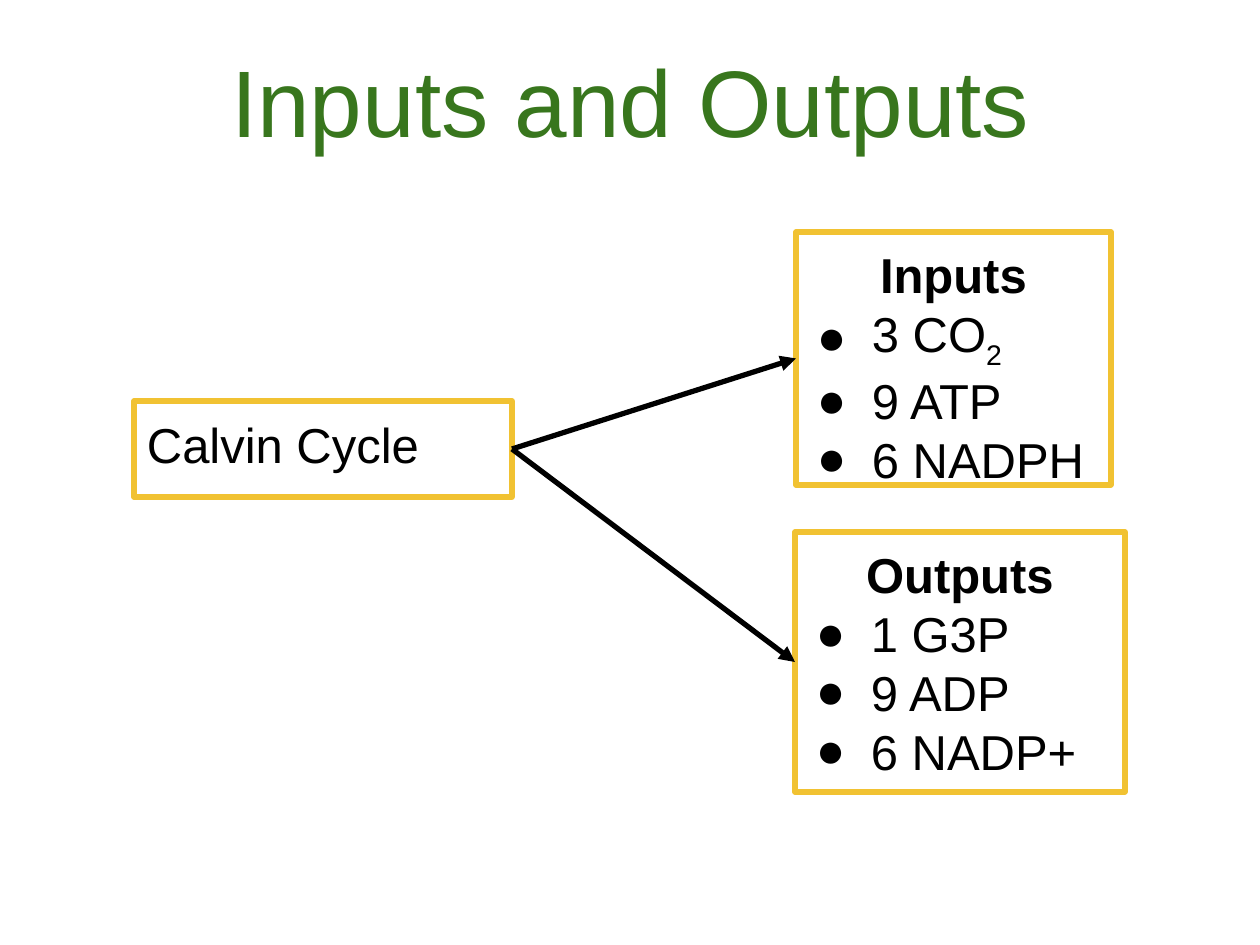
from dataclasses import dataclass

from lxml.etree import SubElement
from pptx import Presentation
from pptx.dml.color import RGBColor
from pptx.enum.shapes import MSO_CONNECTOR as Connector, MSO_SHAPE as Preset
from pptx.enum.text import MSO_ANCHOR as Anchor, MSO_AUTO_SIZE as AutoSize, PP_ALIGN as Align
from pptx.oxml.ns import qn
from pptx.util import Emu, Pt

PX_PER_INCH = 126
COLORS = {"title": "38761D", "border": "F1C232", "ink": "000000"}
FONT = "Arial"
INSET = 13
BULLET_INDENT, BULLET_HANG = 63, 55
RIGHT_SIDE, LEFT_SIDE = 3, 1


@dataclass
class Box:
    left: int
    top: int
    width: int
    height: int
    label: str
    items: tuple[str, ...] = ()


def px(length: int) -> Emu:
    return Emu(round(length * 914400 / PX_PER_INCH))


def color(name: str) -> RGBColor:
    return RGBColor.from_string(COLORS[name])


def set_frame(frame) -> None:
    frame.word_wrap = True
    frame.auto_size = AutoSize.NONE
    frame.vertical_anchor = Anchor.TOP
    frame.margin_left = frame.margin_right = px(INSET)
    frame.margin_top = frame.margin_bottom = px(INSET)


def write(paragraph, text: str, size: int, ink: str, align, bold: bool = False) -> None:
    """Fill a paragraph; an underscore makes the next piece a subscript."""
    paragraph.alignment = align
    font = paragraph.font
    font.name, font.size, font.bold = FONT, Pt(size), bold
    font.color.rgb = color(ink)
    base, _, subscript = text.partition("_")
    paragraph.add_run().text = base
    if subscript:
        lowered = paragraph.add_run()
        lowered.text = subscript
        lowered.font._element.set("baseline", "-25000")


def add_bullet(paragraph) -> None:
    props = paragraph._p.get_or_add_pPr()
    props.set("marL", str(px(BULLET_INDENT)))
    props.set("indent", str(-px(BULLET_HANG)))
    bullet_color = SubElement(props, qn("a:buClr"))
    SubElement(bullet_color, qn("a:srgbClr"), val=COLORS["ink"])
    SubElement(props, qn("a:buFont"), typeface=FONT)
    SubElement(props, qn("a:buChar"), char="●")
    # The schema wants the paragraph's font after its bullet
    props.append(props.find(qn("a:defRPr")))


def draw_box(slide, box: Box):
    shape = slide.shapes.add_shape(
        Preset.RECTANGLE, px(box.left), px(box.top), px(box.width), px(box.height))
    shape.shadow.inherit = False
    shape.fill.background()
    shape.line.color.rgb = color("border")
    shape.line.width = Pt(3)
    frame = shape.text_frame
    set_frame(frame)
    is_list = bool(box.items)
    write(frame.paragraphs[0], box.label, 28, "ink",
          Align.CENTER if is_list else Align.LEFT, bold=is_list)
    for item in box.items:
        entry = frame.add_paragraph()
        write(entry, item, 28, "ink", Align.LEFT)
        add_bullet(entry)
    return shape


def draw_arrow(slide, source, target) -> None:
    arrow = slide.shapes.add_connector(Connector.STRAIGHT, 0, 0, 0, 0)
    arrow.begin_connect(source, RIGHT_SIDE)
    arrow.end_connect(target, LEFT_SIDE)
    arrow.line.color.rgb = color("ink")
    arrow.line.width = Pt(3)
    SubElement(arrow.line._get_or_add_ln(), qn("a:tailEnd"), type="triangle")
    SubElement(arrow._element.spPr, qn("a:effectLst"))


def main() -> None:
    deck = Presentation()
    deck.slide_width, deck.slide_height = px(1260), px(945)
    slide = deck.slides.add_slide(deck.slide_layouts[5])

    # Title
    title = slide.shapes.title
    title.left, title.top, title.width, title.height = px(32), px(30), px(1197), px(105)
    set_frame(title.text_frame)
    write(title.text_frame.paragraphs[0], "Inputs and Outputs", 54, "title", Align.CENTER)

    # Cycle and what goes in and out of it
    inputs = draw_box(slide, Box(796, 232, 315, 253, "Inputs", ("3 CO_2", "9 ATP", "6 NADPH")))
    outputs = draw_box(slide, Box(795, 532, 330, 260, "Outputs", ("1 G3P", "9 ADP", "6 NADP+")))
    cycle = draw_box(slide, Box(134, 401, 378, 96, "Calvin Cycle"))

    # Arrows
    for target in (inputs, outputs):
        draw_arrow(slide, cycle, target)

    deck.save("out.pptx")


if __name__ == "__main__":
    main()
